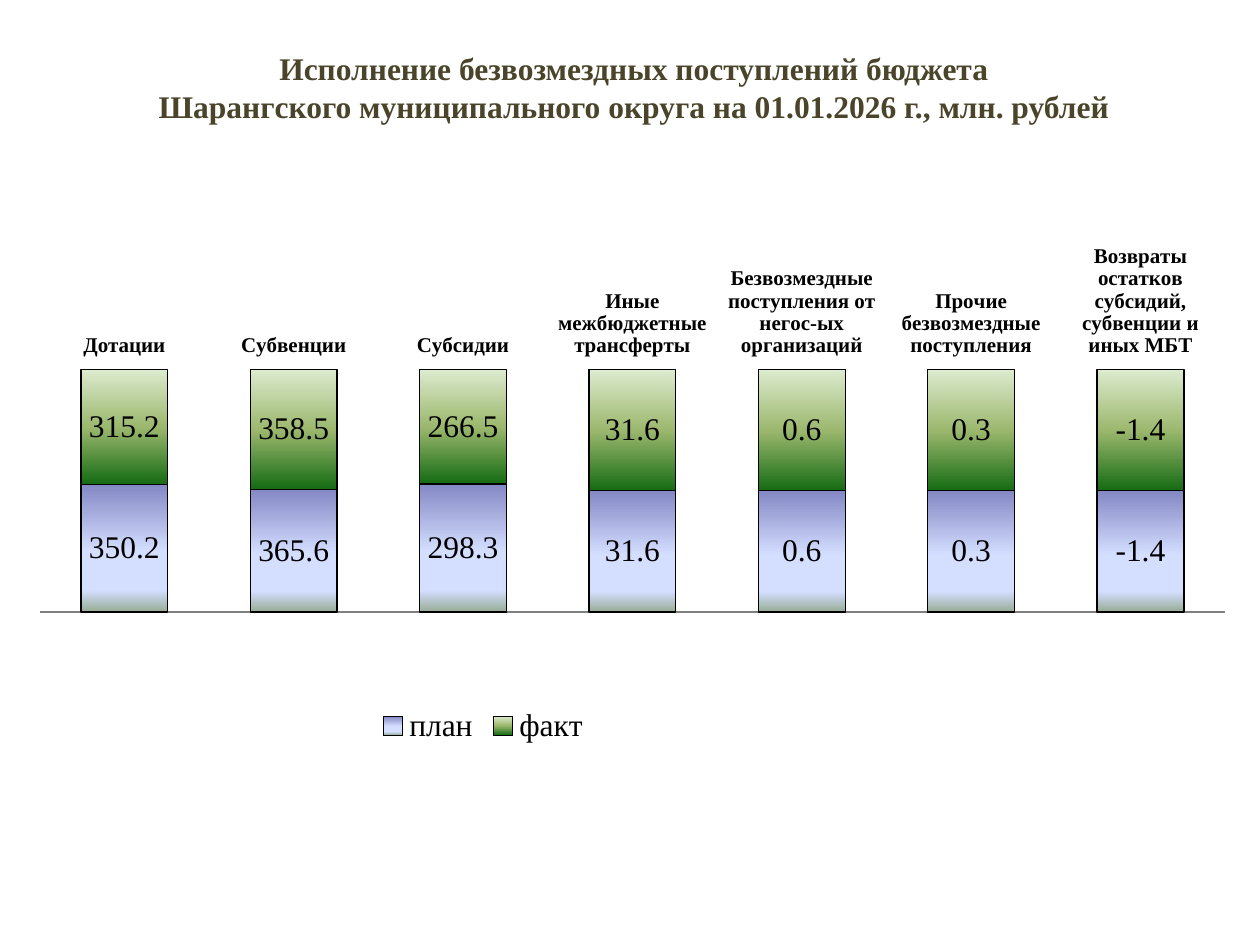
from lxml.etree import SubElement
from pptx import Presentation
from pptx.chart.data import CategoryChartData
from pptx.dml.color import RGBColor
from pptx.enum.chart import (XL_CHART_TYPE, XL_LABEL_POSITION, XL_LEGEND_POSITION,
                             XL_TICK_LABEL_POSITION, XL_TICK_MARK)
from pptx.enum.text import MSO_ANCHOR, MSO_AUTO_SIZE, PP_ALIGN
from pptx.oxml import parse_xml
from pptx.oxml.ns import nsdecls, qn
from pptx.util import Inches, Pt

PX = Inches(1) // 126
BLACK = RGBColor(0x00, 0x00, 0x00)
GRAY = RGBColor(0x80, 0x80, 0x80)
OLIVE = RGBColor(0x4A, 0x45, 0x2A)
INDIGO = RGBColor(0x84, 0x88, 0xC4)
PALE_BLUE = RGBColor(0xD4, 0xDE, 0xFF)
SAGE = RGBColor(0x96, 0xAB, 0x94)
PALE_GREEN = RGBColor(0xDD, 0xEB, 0xCF)
LEAF = RGBColor(0x9C, 0xB8, 0x6E)
FOREST = RGBColor(0x15, 0x6B, 0x13)

TITLE = ("Исполнение безвозмездных поступлений бюджета\v"
         "Шарангского муниципального округа на 01.01.2026 г., млн. рублей")
REVENUES = [  # category, plan, actual
    ("Дотации", 350.2, 315.2),
    ("Субвенции", 365.6, 358.5),
    ("Субсидии", 298.3, 266.5),
    ("Иные межбюджетные трансферты", 31.6, 31.6),
    ("Безвозмездные поступления от негос-ых организаций", 0.6, 0.6),
    ("Прочие безвозмездные поступления", 0.3, 0.3),
    ("Возвраты остатков субсидий, субвенции и иных МБТ", -1.4, -1.4),
]
GRADIENTS = {
    "план": [(0, INDIGO), (53, PALE_BLUE), (83, PALE_BLUE), (100, SAGE)],
    "факт": [(0, PALE_GREEN), (50, LEAF), (100, FOREST)],
}


class BudgetSlide:
    font_name = "Times New Roman"

    def __init__(self, slide):
        self.slide = slide

    def style(self, font, size, color=BLACK, bold=False):
        font.name, font.size, font.bold = self.font_name, Pt(size), bold
        font.color.rgb = color

    def title(self, text, left, top, width, height, inset):
        title = self.slide.shapes.title
        title.left, title.top = left * PX, top * PX
        title.width, title.height = width * PX, height * PX
        frame = title.text_frame
        frame.text = text
        frame.word_wrap = True
        frame.auto_size = MSO_AUTO_SIZE.NONE
        frame.vertical_anchor = MSO_ANCHOR.TOP
        frame.margin_top = inset * PX
        heading = frame.paragraphs[0]
        heading.alignment = PP_ALIGN.CENTER
        self.style(heading.font, 18, OLIVE, bold=True)

    def gradient(self, series, stops):
        fill = series.format.fill
        fill.gradient()
        fill.gradient_angle = 270
        stop_list = series._element.find(".//" + qn("a:gsLst"))
        for stop in list(stop_list):
            stop_list.remove(stop)
        for percent, color in stops:
            stop = SubElement(stop_list, qn("a:gs"), pos=str(percent * 1000))
            SubElement(stop, qn("a:srgbClr"), val=str(color))

    def layout(self, part, x, y, w=None, h=None):
        """Place a chart part by fractions of the chart area."""
        inner = "" if w is None else '<c:layoutTarget val="inner"/>'
        size = "" if w is None else f'<c:w val="{w}"/><c:h val="{h}"/>'
        for old in part.findall(qn("c:layout")):
            part.remove(old)
        element = parse_xml(
            f'<c:layout {nsdecls("c")}><c:manualLayout>{inner}<c:xMode val="edge"/>'
            f'<c:yMode val="edge"/><c:x val="{x}"/><c:y val="{y}"/>{size}'
            '</c:manualLayout></c:layout>')
        before = part.find(qn("c:legendPos"))
        part.insert(0 if before is None else part.index(before) + 1, element)

    def stacked_chart(self, rows, gradients, left, top, width, height):
        categories, *columns = zip(*rows)
        data = CategoryChartData(number_format="0.0")
        data.categories = categories
        for name, values in zip(gradients, columns):
            data.add_series(name, values)
        chart = self.slide.shapes.add_chart(
            XL_CHART_TYPE.COLUMN_STACKED_100, left * PX, top * PX,
            width * PX, height * PX, data).chart
        chart.has_title = False
        self.style(chart.font, 18)

        # Columns and their values
        plot = chart.plots[0]
        plot.gap_width, plot.overlap = 95, 100
        plot.vary_by_categories = False
        for series in plot.series:
            series.invert_if_negative = False
            self.gradient(series, gradients[series.name])
            series.format.line.color.rgb = BLACK
            series.format.line.width = Pt(0.75)
            labels = series.data_labels
            labels.show_value = True
            labels.number_format, labels.number_format_is_linked = "0.0", False
            labels.position = XL_LABEL_POSITION.CENTER
            self.style(labels.font, 18)

        # Axes
        shares = chart.value_axis
        shares.minimum_scale, shares.maximum_scale, shares.major_unit = -1, 1, 0.1
        shares.has_major_gridlines = False
        shares.visible = False
        kinds = chart.category_axis
        kinds.major_tick_mark = XL_TICK_MARK.NONE
        kinds.tick_label_position = XL_TICK_LABEL_POSITION.HIGH
        kinds.format.line.color.rgb = GRAY
        self.style(kinds.tick_labels.font, 12, bold=True)

        # Legend and plot placement
        chart.has_legend = True
        chart.legend.position = XL_LEGEND_POSITION.TOP
        chart.legend.include_in_layout = False
        self.style(chart.legend.font, 18)
        self.layout(chart.legend._element, 0.29, 0.76)
        self.layout(plot._element.getparent(), 0.02, 0.28, 0.96, 0.7)


def main():
    deck = Presentation()
    deck.slide_width, deck.slide_height = Inches(10), Inches(7.5)
    slide = deck.slides.add_slide(deck.slide_layouts[0])
    subtitle = slide.placeholders[1].element
    subtitle.getparent().remove(subtitle)

    budget = BudgetSlide(slide)
    budget.title(TITLE, 84, 16, 1100, 238, inset=33)
    budget.stacked_chart(REVENUES, GRADIENTS, 15, 175, 1235, 694)
    deck.save("out.pptx")


if __name__ == "__main__":
    main()
